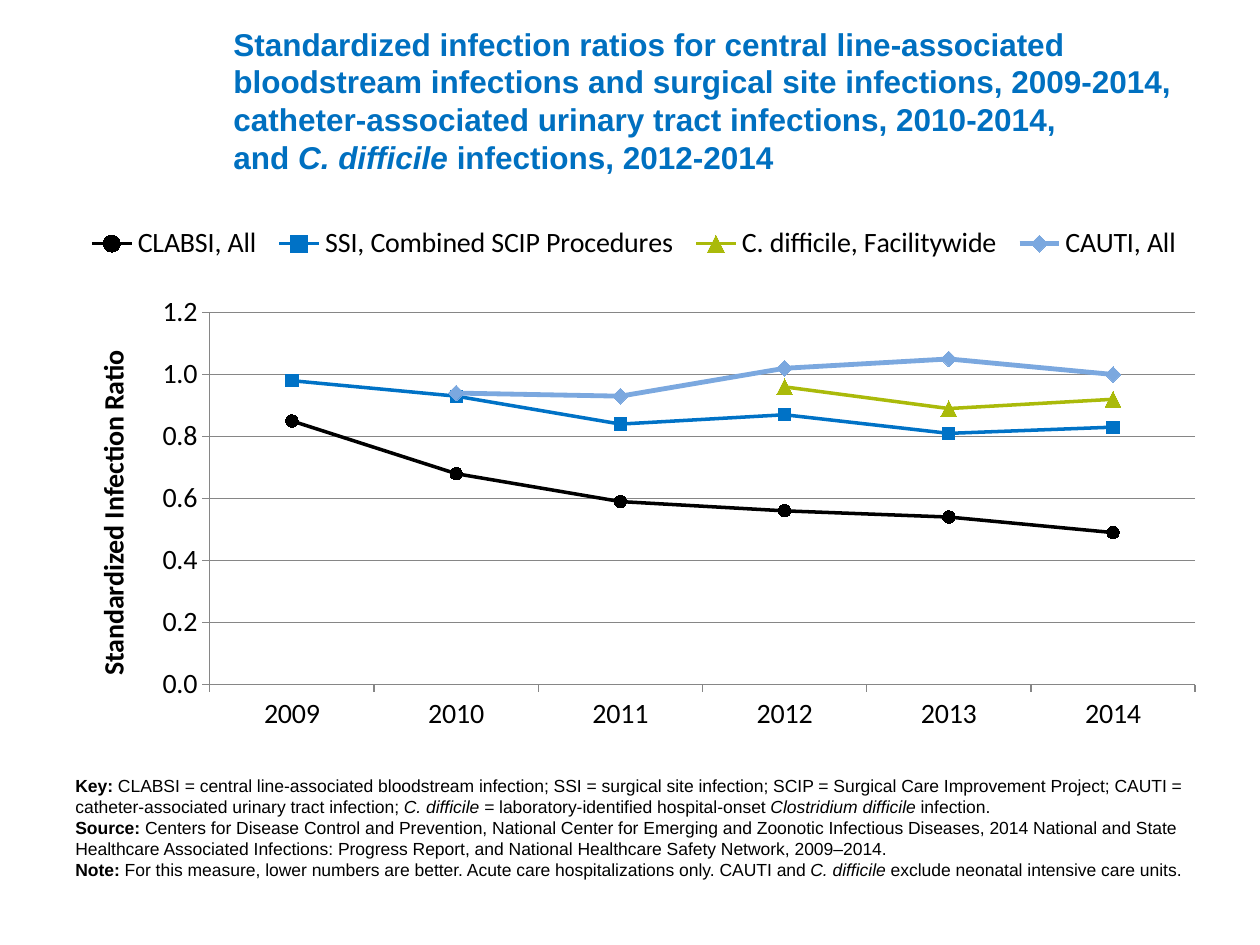
import pptx
import pptx.chart.data
import pptx.dml.color
import pptx.enum.chart
import pptx.enum.text
import pptx.oxml
import pptx.oxml.ns
import pptx.util

Cm, Pt = pptx.util.Cm, pptx.util.Pt
MARKER = pptx.enum.chart.XL_MARKER_STYLE

THEME = {
    "title": "0070C0", "text": "000000", "grid": "868686",
    "text_font": "Arial", "chart_font": "Calibri",
    "title_size": 18, "chart_size": 16, "note_size": 10,
}

# Runs are (text, style): "b" bold, "i" italic; "\n" stands for a line break.
TITLE = [
    ("Standardized infection ratios for central line-associated bloodstream infections "
     "and surgical site infections, 2009-2014, catheter-associated urinary tract "
     "infections, 2010-2014, ", "b"),
    ("\n", ""),
    ("and ", "b"), ("C. difficile", "bi"), (" infections, 2012-2014", "b"),
]
NOTES = [
    [("Key: ", "b"),
     ("CLABSI = central line-associated bloodstream infection; SSI = surgical site "
      "infection; SCIP = Surgical Care Improvement Project; CAUTI = catheter-associated "
      "urinary tract infection; ", ""),
     ("C. difficile = ", "i"), ("laboratory-identified hospital-onset ", ""),
     ("Clostridium difficile", "i"), (" infection.", "")],
    [("Source: ", "b"),
     ("Centers for Disease Control and Prevention, National Center for Emerging and "
      "Zoonotic Infectious Diseases, 2014 National and State Healthcare Associated "
      "Infections: Progress Report, and National Healthcare Safety Network, 2009–2014.", "")],
    [("Note:", "b"),
     (" For this measure, lower numbers are better. Acute care hospitalizations only. "
      "CAUTI and ", ""),
     ("C. difficile ", "i"), ("exclude neonatal intensive care units.", "")],
]
AXIS_TITLE = "Standardized Infection Ratio"
YEARS = ["2009", "2010", "2011", "2012", "2013", "2014"]
# name, values, colour, line width, marker, marker size
SERIES = [
    ("CLABSI, All", (0.85, 0.68, 0.59, 0.56, 0.54, 0.49),
     "000000", 2, MARKER.CIRCLE, 7),
    ("SSI, Combined SCIP Procedures", (0.98, 0.93, 0.84, 0.87, 0.81, 0.83),
     "0072C6", 2, MARKER.SQUARE, 7),
    ("C. difficile, Facilitywide", (None, None, None, 0.96, 0.89, 0.92),
     "AABA0A", 2, MARKER.TRIANGLE, 9),
    ("CAUTI, All", (None, 0.94, 0.93, 1.02, 1.05, 1.0),
     "7BA8DF", 2.75, MARKER.DIAMOND, 9),
]


def rgb(value):
    return pptx.dml.color.RGBColor.from_string(value)


def set_font(font, name, size, color, style=""):
    font.name, font.size = name, Pt(size)
    font.color.rgb = rgb(color)
    font.bold, font.italic = "b" in style, "i" in style


def add_runs(p, runs, size, color):
    for text, style in runs:
        if text == "\n":
            p.add_line_break()
            continue
        r = p.add_run()
        r.text = text
        set_font(r.font, THEME["text_font"], size, color, style)


def make_layout(x, y, w, h, inner=False):
    """Manual chart layout in fractions of the chart frame."""
    target = '<c:layoutTarget val="inner"/>' if inner else ""
    return pptx.oxml.parse_xml(
        f'<c:layout {pptx.oxml.ns.nsdecls("c")}><c:manualLayout>{target}'
        '<c:xMode val="edge"/><c:yMode val="edge"/>'
        f'<c:x val="{x}"/><c:y val="{y}"/><c:w val="{w}"/><c:h val="{h}"/>'
        '</c:manualLayout></c:layout>')


def replace_layout(parent, layout, before):
    for old in parent.findall(pptx.oxml.ns.qn("c:layout")):
        parent.remove(old)
    parent.find(pptx.oxml.ns.qn(before)).addprevious(layout)


def add_title(s):
    title = s.shapes.title
    title.left, title.top, title.width, title.height = Cm(4.45), Cm(0.43), Cm(19.69), Cm(3.18)
    tf = title.text_frame
    tf.word_wrap = True
    tf.vertical_anchor = pptx.enum.text.MSO_ANCHOR.MIDDLE
    p = tf.paragraphs[0]
    p.alignment = pptx.enum.text.PP_ALIGN.LEFT
    add_runs(p, TITLE, THEME["title_size"], THEME["title"])


def add_ratio_chart(s):
    data = pptx.chart.data.CategoryChartData(number_format="0.00")
    data.categories = YEARS
    for name, values, *_ in SERIES:
        data.add_series(name, values)
    chart = s.shapes.add_chart(
        pptx.enum.chart.XL_CHART_TYPE.LINE_MARKERS,
        Cm(1.35), Cm(4.01), Cm(22.86), Cm(11.28), data).chart
    chart_font = (THEME["chart_font"], THEME["chart_size"], THEME["text"])
    set_font(chart.font, *chart_font)
    chart.has_title = False

    plot = chart.plots[0]
    plot.vary_by_categories = False
    for series, (_, _, color, width, marker, size) in zip(plot.series, SERIES):
        series.smooth = False
        series.format.line.color.rgb = rgb(color)
        series.format.line.width = Pt(width)
        series.marker.style, series.marker.size = marker, size
        series.marker.format.fill.solid()
        series.marker.format.fill.fore_color.rgb = rgb(color)
        series.marker.format.line.color.rgb = rgb(color)

    value_axis = chart.value_axis
    value_axis.minimum_scale, value_axis.maximum_scale = 0, 1.2
    value_axis.major_unit = 0.2
    value_axis.has_major_gridlines = True
    value_axis.tick_labels.number_format = "0.0"
    value_axis.tick_labels.number_format_is_linked = False
    p = value_axis.axis_title.text_frame.paragraphs[0]
    r = p.add_run()
    r.text = AXIS_TITLE
    set_font(r.font, *chart_font, "b")
    for axis in (chart.category_axis, value_axis):
        axis.major_tick_mark = pptx.enum.chart.XL_TICK_MARK.OUTSIDE
        set_font(axis.tick_labels.font, *chart_font)
    for part in (chart.category_axis, value_axis, value_axis.major_gridlines):
        part.format.line.color.rgb = rgb(THEME["grid"])
        part.format.line.width = Pt(0.75)

    chart.has_legend = True
    legend = chart.legend
    legend.position = pptx.enum.chart.XL_LEGEND_POSITION.TOP
    legend.include_in_layout = False
    set_font(legend.font, *chart_font)
    replace_layout(legend._element, make_layout(0.01, 0.04, 0.98, 0.08), "c:overlay")
    plot_area = chart._chartSpace.chart.plotArea
    replace_layout(plot_area, make_layout(0.126, 0.203, 0.869, 0.665, True), "c:lineChart")


def add_notes(s):
    tf = s.shapes.add_textbox(Cm(1.27), Cm(15.49), Cm(22.86), Cm(2.39)).text_frame
    tf.word_wrap = True
    tf.auto_size = pptx.enum.text.MSO_AUTO_SIZE.SHAPE_TO_FIT_TEXT
    for i, runs in enumerate(NOTES):
        p = tf.add_paragraph() if i else tf.paragraphs[0]
        add_runs(p, runs, THEME["note_size"], THEME["text"])


def main():
    prs = pptx.Presentation()
    prs.slide_width, prs.slide_height = Cm(25.4), Cm(19.05)
    s = prs.slides.add_slide(prs.slide_layouts[5])
    add_title(s)
    add_notes(s)
    add_ratio_chart(s)
    prs.save("out.pptx")


if __name__ == "__main__":
    main()
